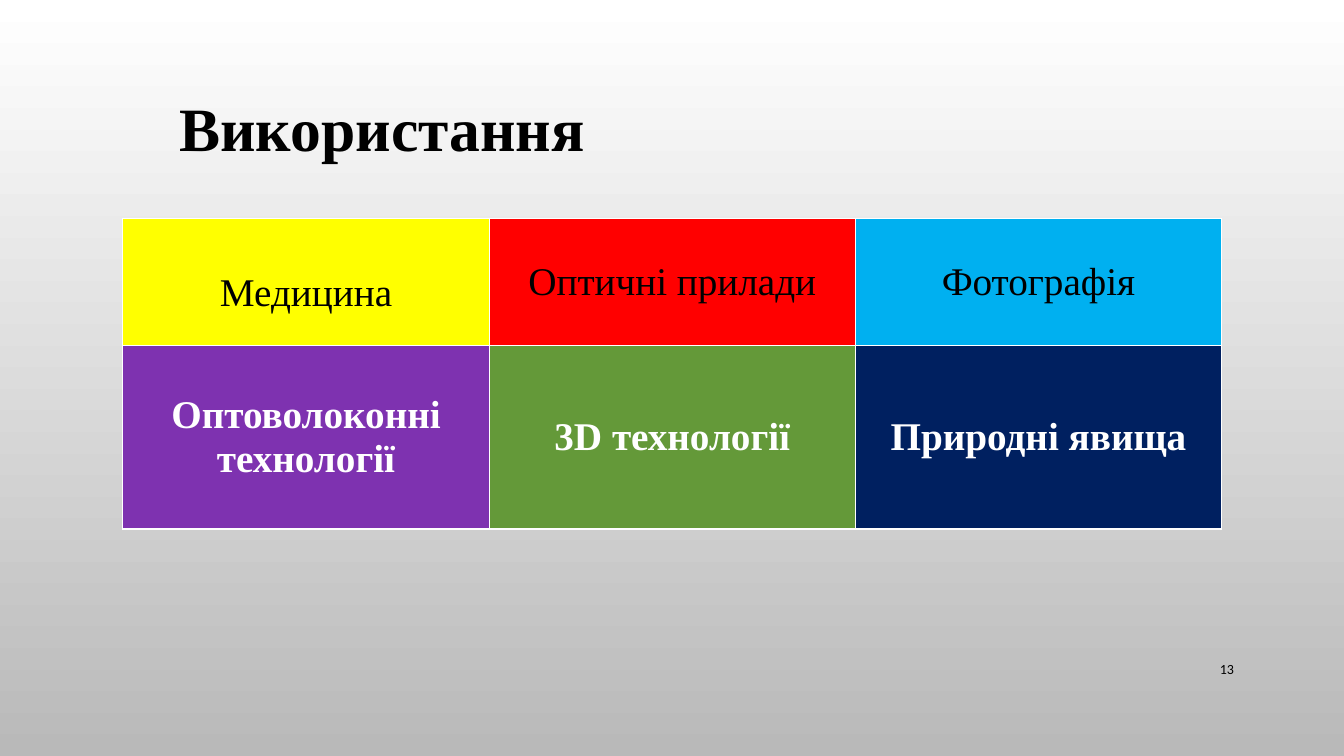
from lxml import etree
from pptx import Presentation
from pptx import util as u
from pptx.dml.color import RGBColor
from pptx.enum import text
from pptx.oxml import ns

BLACK = RGBColor(0x00, 0x00, 0x00)
WHITE = RGBColor(0xFF, 0xFF, 0xFF)
GREY = RGBColor(0xB9, 0xB9, 0xB9)
YELLOW = RGBColor(0xFF, 0xFF, 0x00)
RED = RGBColor(0xFF, 0x00, 0x00)
SKY = RGBColor(0x00, 0xB0, 0xF0)
PURPLE = RGBColor(0x7E, 0x32, 0xB0)
GREEN = RGBColor(0x64, 0x99, 0x39)
NAVY = RGBColor(0x00, 0x20, 0x60)

LEFT, CENTER, RIGHT = (text.PP_ALIGN.LEFT, text.PP_ALIGN.CENTER,
                       text.PP_ALIGN.RIGHT)
TOP, MIDDLE = text.MSO_ANCHOR.TOP, text.MSO_ANCHOR.MIDDLE

USES = [
    [("Медицина", YELLOW), ("Оптичні прилади", RED), ("Фотографія", SKY)],
    [("Оптоволоконні технології", PURPLE), ("3D технології", GREEN),
     ("Природні явища", NAVY)],
]


def write(tf, words, size, font="Times New Roman", color=BLACK, bold=False,
          align=LEFT, spacing=None):
    p = tf.paragraphs[0]
    p.alignment = align
    if spacing:
        p.line_spacing = spacing
    r = p.add_run()
    r.text = words
    r.font.name = font
    r.font.size = u.Pt(size)
    r.font.bold = bold
    r.font.color.rgb = color


class Deck:
    def __init__(self, prs):
        self.slide = prs.slides.add_slide(prs.slide_layouts[6])
        self.border = WHITE
        self.border_width = 1

    def background(self, top, bottom):
        fill = self.slide.background.fill
        fill.gradient()
        fill.gradient_angle = 270
        for stop, color, position in zip(fill.gradient_stops, (top, bottom), (0, 1)):
            stop.color.rgb = color
            stop.position = position

    def label(self, words, x, y, w, h, size, anchor=TOP, **style):
        sp = self.slide.shapes.add_textbox(u.Pt(x), u.Pt(y), u.Pt(w), u.Pt(h))
        tf = sp.text_frame
        tf.word_wrap = True
        tf.vertical_anchor = anchor
        write(tf, words, size, **style)

    def outline(self, cell):
        """Draw the same line on all four sides of a cell."""
        tc_pr = cell._tc.get_or_add_tcPr()
        for side in ("lnL", "lnR", "lnT", "lnB"):
            ln = etree.SubElement(tc_pr, ns.qn("a:" + side),
                                  w=str(u.Pt(self.border_width)))
            fill = etree.SubElement(ln, ns.qn("a:solidFill"))
            etree.SubElement(fill, ns.qn("a:srgbClr"), val=str(self.border))

    def table(self, rows, x, y, w, heights):
        columns = len(rows[0])
        table = self.slide.shapes.add_table(
            len(rows), columns, u.Pt(x), u.Pt(y), u.Pt(w),
            u.Pt(sum(heights))).table
        table.first_row = table.horz_banding = False
        for column in table.columns:
            column.width = u.Pt(w / columns)
        for i, row in enumerate(rows):
            table.rows[i].height = u.Pt(heights[i])
            for j, (words, color) in enumerate(row):
                cell = table.cell(i, j)
                self.outline(cell)
                cell.fill.solid()
                cell.fill.fore_color.rgb = color
                cell.vertical_anchor = MIDDLE
                write(cell.text_frame, words, 28, align=CENTER,
                      color=WHITE if i else BLACK, bold=i > 0,
                      spacing=1.5 if i == j == 0 else None)


def main():
    prs = Presentation()
    prs.slide_width, prs.slide_height = u.Pt(960), u.Pt(540)
    deck = Deck(prs)
    deck.background(WHITE, GREY)
    deck.label("13", 828, 463, 60.5, 29, 10, anchor=MIDDLE, font="Calibri",
               align=RIGHT)
    deck.label("Використання", 121, 60.5, 821.5, 60.5, 44, bold=True)
    deck.table(USES, 87.8, 156.2, 784.8, [90.7, 131])
    prs.save("out.pptx")


if __name__ == "__main__":
    main()
